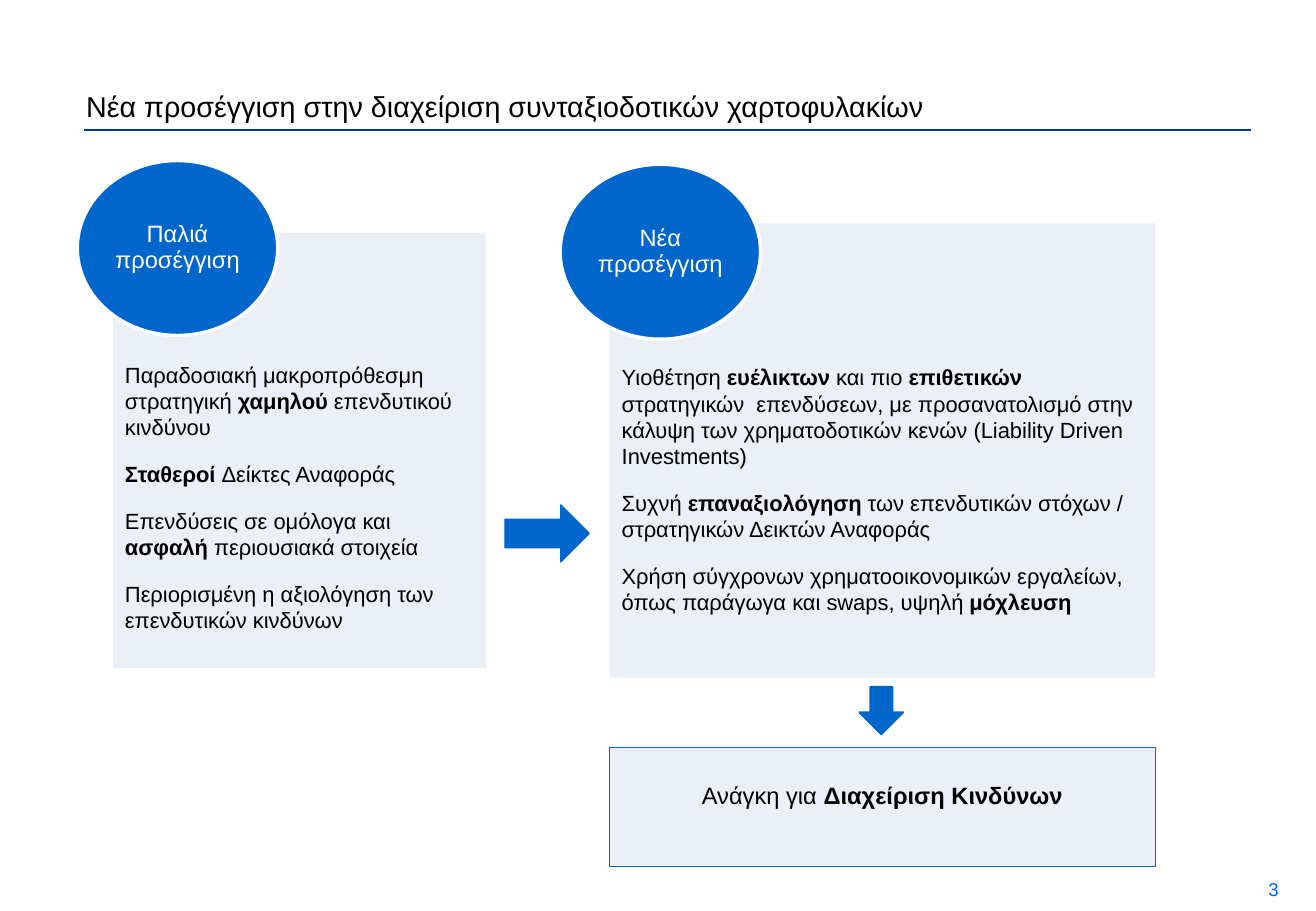
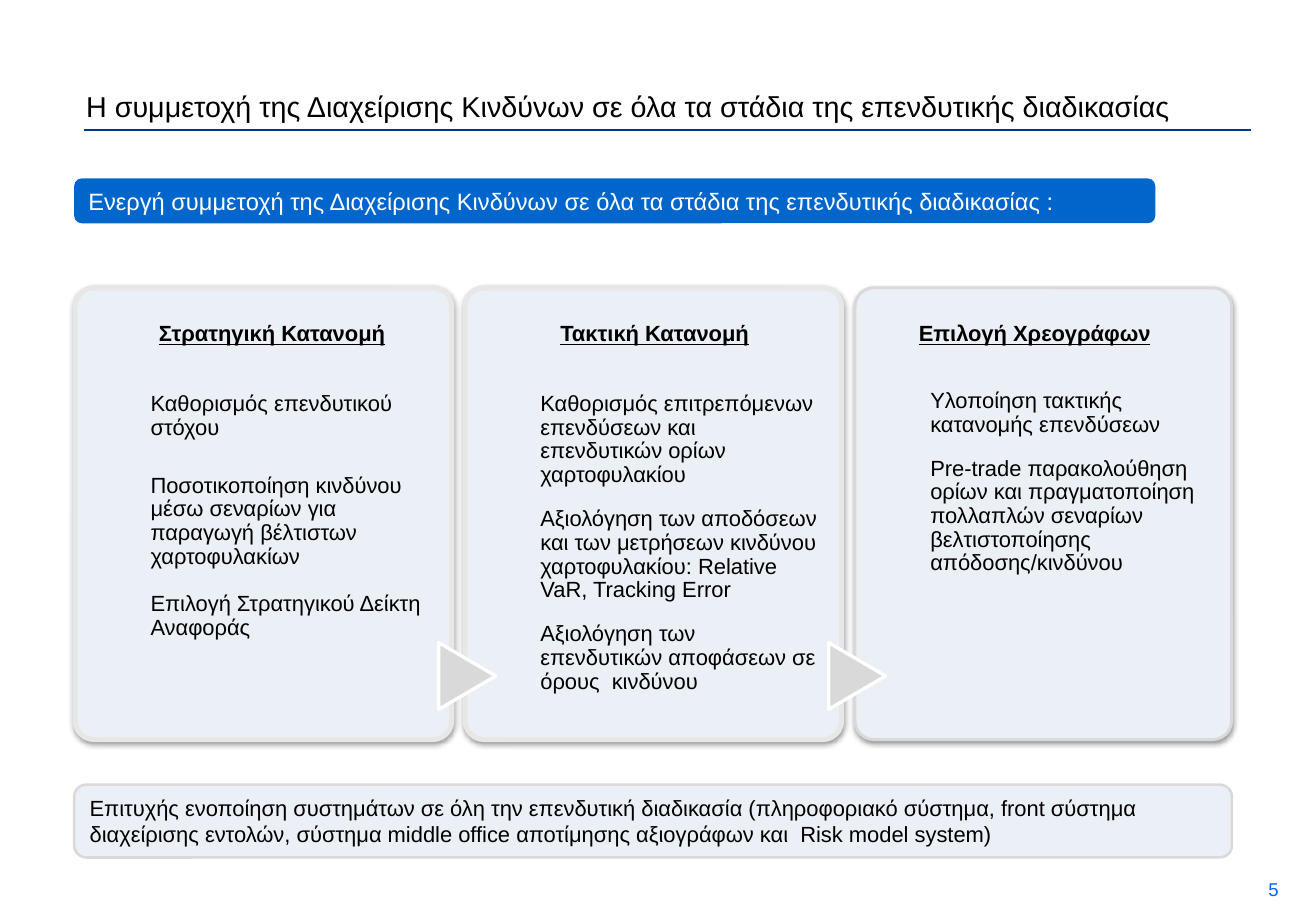
import pptx
import pptx.dml.color
import pptx.enum.shapes
import pptx.enum.text
import pptx.util
from lxml import etree
from pptx.oxml.ns import qn

Pt = pptx.util.Pt
SHAPE = pptx.enum.shapes.MSO_SHAPE
ALIGN = pptx.enum.text.PP_ALIGN
ANCHOR = pptx.enum.text.MSO_ANCHOR

COLOURS = {
    "text": "000000",
    "white": "FFFFFF",
    "rule": "003399",
    "number": "0066FF",
    "blue": "0066CC",
    "panel": "EAF0F6",
    "card_edge": "E7E7E7",
    "grey": "D9D9D9",
}
FONT = "Arial"
INSETS = (7.2, 3.6, 7.2, 3.6)


def colour(name):
    return pptx.dml.color.RGBColor.from_string(COLOURS[name])


class Deck:
    """Holds the style, the presentation and the slide being filled."""

    def __init__(self):
        self.presentation = pptx.Presentation()
        self.presentation.slide_width = Pt(780)
        self.presentation.slide_height = Pt(540)
        self.slide = None

    def new_slide(self, title, number):
        layout = self.presentation.slide_layouts[6]
        self.slide = self.presentation.slides.add_slide(layout)
        self.rule(741.6, 49.7, 77)
        self.text_box((742, 514, 23, 26), [number], size=11, ink="number",
                      align=ALIGN.RIGHT)
        self.text_box((44, 49, 690, 28), [title], size=17)

    def rule(self, start, end, y):
        kind = pptx.enum.shapes.MSO_CONNECTOR.STRAIGHT
        line = self.slide.shapes.add_connector(kind, Pt(start), Pt(y), Pt(end), Pt(y))
        line.line.color.rgb = colour("rule")
        line.line.width = Pt(1.5)
        etree.SubElement(line._element.spPr, qn("a:effectLst"))

    def shape(self, kind, frame, fill, edge=None, width=1, rotation=0, corner=None):
        shape = self.slide.shapes.add_shape(kind, *map(Pt, frame))
        shape.shadow.inherit = False
        shape.fill.solid()
        shape.fill.fore_color.rgb = colour(fill)
        if edge:
            shape.line.color.rgb = colour(edge)
            shape.line.width = Pt(width)
        else:
            shape.line.fill.background()
        shape.rotation = rotation
        if corner is not None:
            shape.adjustments[0] = corner
        return shape

    def soft_shadow(self, shape):
        effects = shape._element.spPr.find(qn("a:effectLst"))
        shadow = etree.SubElement(effects, qn("a:outerShdw"), blurRad=str(Pt(3.1)),
                                  dist=str(Pt(1.6)), dir="5400000", rotWithShape="0")
        black = etree.SubElement(shadow, qn("a:srgbClr"), val="000000")
        etree.SubElement(black, qn("a:alpha"), val="38000")

    def text_box(self, frame, paragraphs, **style):
        box = self.slide.shapes.add_textbox(*map(Pt, frame))
        self.fill_text(box, paragraphs, **style)

    def fill_text(self, shape, paragraphs, size=13, ink="text", align=ALIGN.LEFT,
                  insets=INSETS, gaps=(), spacing=None, underline=False):
        """Fill a shape, centred in height; **marks** bold, gaps go between paragraphs."""
        frame = shape.text_frame
        frame.word_wrap = True
        frame.vertical_anchor = ANCHOR.MIDDLE
        (frame.margin_left, frame.margin_top,
         frame.margin_right, frame.margin_bottom) = map(Pt, insets)
        for index, text in enumerate(paragraphs):
            paragraph = frame.add_paragraph() if index else frame.paragraphs[0]
            paragraph.alignment = align
            if index:
                paragraph.space_before = Pt(gaps[index - 1])
            if spacing:
                paragraph.line_spacing = spacing
            for part, words in enumerate(text.split("**")):
                if not words:
                    continue
                run = paragraph.add_run()
                run.text = words
                run.font.name = FONT
                run.font.size = Pt(size)
                run.font.bold = part % 2 == 1
                run.font.underline = underline
                run.font.color.rgb = colour(ink)

    def approach(self, panel_frame, top_inset, paragraphs, circle_corner, label):
        panel = self.shape(SHAPE.RECTANGLE, panel_frame, "panel")
        self.fill_text(panel, paragraphs, insets=(7.2, top_inset, 7.2, 3.6),
                       gaps=[12] * (len(paragraphs) - 1))
        circle = self.shape(SHAPE.OVAL, (*circle_corner, 118.8, 103.7),
                            "blue", "white", 2)
        self.fill_text(circle, [label], size=14, ink="white", align=ALIGN.CENTER,
                       insets=(0.72,) * 4, spacing=0.9)

    def card(self, left, edge, width, heading, heading_left, heading_width,
             paragraphs, gaps, insets):
        card = self.shape(SHAPE.ROUNDED_RECTANGLE, (left, 170.6, 223.2, 267.8),
                          "panel", edge, width, corner=0.05)
        self.soft_shadow(card)
        plate = self.shape(SHAPE.PENTAGON, (heading_left, 179.3, heading_width, 36),
                           "panel", "panel", 2)
        self.fill_text(plate, [f"**{heading}**"], align=ALIGN.CENTER, underline=True)
        self.text_box((left + 44.6, 170.6, 166.3, 267.8), paragraphs,
                      gaps=gaps, insets=insets, spacing=0.9)


def build_approaches(deck):
    deck.new_slide("Νέα προσέγγιση στην διαχείριση συνταξιοδοτικών χαρτοφυλακίων", "3")
    deck.approach((67, 138.2, 221, 257.8), 58.6, [
        "Παραδοσιακή μακροπρόθεσμη στρατηγική **χαμηλού** επενδυτικού κινδύνου",
        "**Σταθεροί **Δείκτες Αναφοράς",
        "Επενδύσεις σε ομόλογα και **ασφαλή** περιουσιακά στοιχεία",
        "Περιορισμένη η αξιολόγηση των επενδυτικών κινδύνων",
    ], (45.8, 95.2), "Παλιά προσέγγιση")
    deck.approach((361.4, 132.5, 323.3, 269.3), 49.6, [
        "Υιοθέτηση **ευέλικτων** και πιο **επιθετικών **στρατηγικών  επενδύσεων, "
        "με προσανατολισμό στην κάλυψη των χρηματοδοτικών κενών "
        "(Liability Driven Investments)",
        "Συχνή **επαναξιολόγηση** των επενδυτικών στόχων / στρατηγικών "
        "Δεικτών Αναφοράς",
        "Χρήση σύγχρονων χρηματοοικονομικών εργαλείων, όπως παράγωγα και swaps, "
        "υψηλή **μόχλευση**",
    ], (332, 97.4), "Νέα προσέγγιση")
    deck.shape(SHAPE.RIGHT_ARROW, (299.3, 299.3, 50, 33.8), "blue", "blue", 0.75)
    deck.shape(SHAPE.RIGHT_ARROW, (508.3, 408.2, 28.1, 25.9), "blue", "blue", 1.25,
               rotation=90)
    need = deck.shape(SHAPE.RECTANGLE, (361.4, 442.8, 323.3, 70.6),
                      "panel", "blue", 0.5)
    deck.fill_text(need, ["Ανάγκη για **Διαχείριση Κινδύνων**"], size=14,
                   align=ALIGN.CENTER, insets=(7.2, 3.6, 7.2, 17.6))


def build_stages(deck):
    deck.new_slide("Η συμμετοχή της Διαχείρισης Κινδύνων σε όλα τα στάδια "
                   "της επενδυτικής διαδικασίας", "5")
    first_card, pitch = 44.6, 231.1
    stages = [
        ("card_edge", 3, "Στρατηγική Κατανομή", 72.7, 185.8, [
            "Καθορισμός επενδυτικού στόχου",
            "Ποσοτικοποίηση κινδύνου μέσω σεναρίων για παραγωγή βέλτιστων "
            "χαρτοφυλακίων",
            "Επιλογή Στρατηγικού Δείκτη Αναφοράς",
        ], (20.3, 14), (0, 3, 0, 0)),
        ("card_edge", 3, "Τακτική Κατανομή", 299.5, 185.8, [
            "Καθορισμός επιτρεπόμενων επενδύσεων και επενδυτικών ορίων "
            "χαρτοφυλακίου",
            "Αξιολόγηση των αποδόσεων και των μετρήσεων κινδύνου χαρτοφυλακίου: "
            "Relative VaR, Tracking Error",
            "Αξιολόγηση των επενδυτικών αποφάσεων σε όρους  κινδύνου",
        ], (12, 12), (0, 35, 0, 0)),
        ("grey", 1.75, "Επιλογή Χρεογράφων", 522.7, 190, [
            "Υλοποίηση τακτικής κατανομής επενδύσεων",
            "Pre-trade παρακολούθηση ορίων και πραγματοποίηση πολλαπλών σεναρίων "
            "βελτιστοποίησης απόδοσης/κινδύνου",
        ], (12,), (0, 0, 0, 37)),
    ]
    for index, stage in enumerate(stages):
        deck.card(first_card + index * pitch, *stage)
    for index in range(1, len(stages)):
        left = first_card + index * pitch - 18.6
        deck.shape(SHAPE.FLOWCHART_EXTRACT, (left, 383.8, 39.6, 33.8),
                   "grey", "white", 2, rotation=90)

    banner = deck.shape(SHAPE.ROUNDED_RECTANGLE, (44, 105.8, 640.8, 26.6), "blue")
    deck.fill_text(banner, [
        "Ενεργή συμμετοχή της Διαχείρισης Κινδύνων σε όλα τα στάδια "
        "της επενδυτικής διαδικασίας :"], size=14, ink="white")
    summary = deck.shape(SHAPE.ROUNDED_RECTANGLE, (44, 465.1, 686.2, 43.2),
                         "panel", "grey", 1.5)
    deck.fill_text(summary, [
        "Επιτυχής ενοποίηση συστημάτων σε όλη την επενδυτική διαδικασία "
        "(πληροφοριακό σύστημα, front σύστημα διαχείρισης εντολών, σύστημα "
        "middle office αποτίμησης αξιογράφων και  Risk model system)"])


def main():
    deck = Deck()
    build_approaches(deck)
    build_stages(deck)
    deck.presentation.save("out.pptx")


if __name__ == "__main__":
    main()
